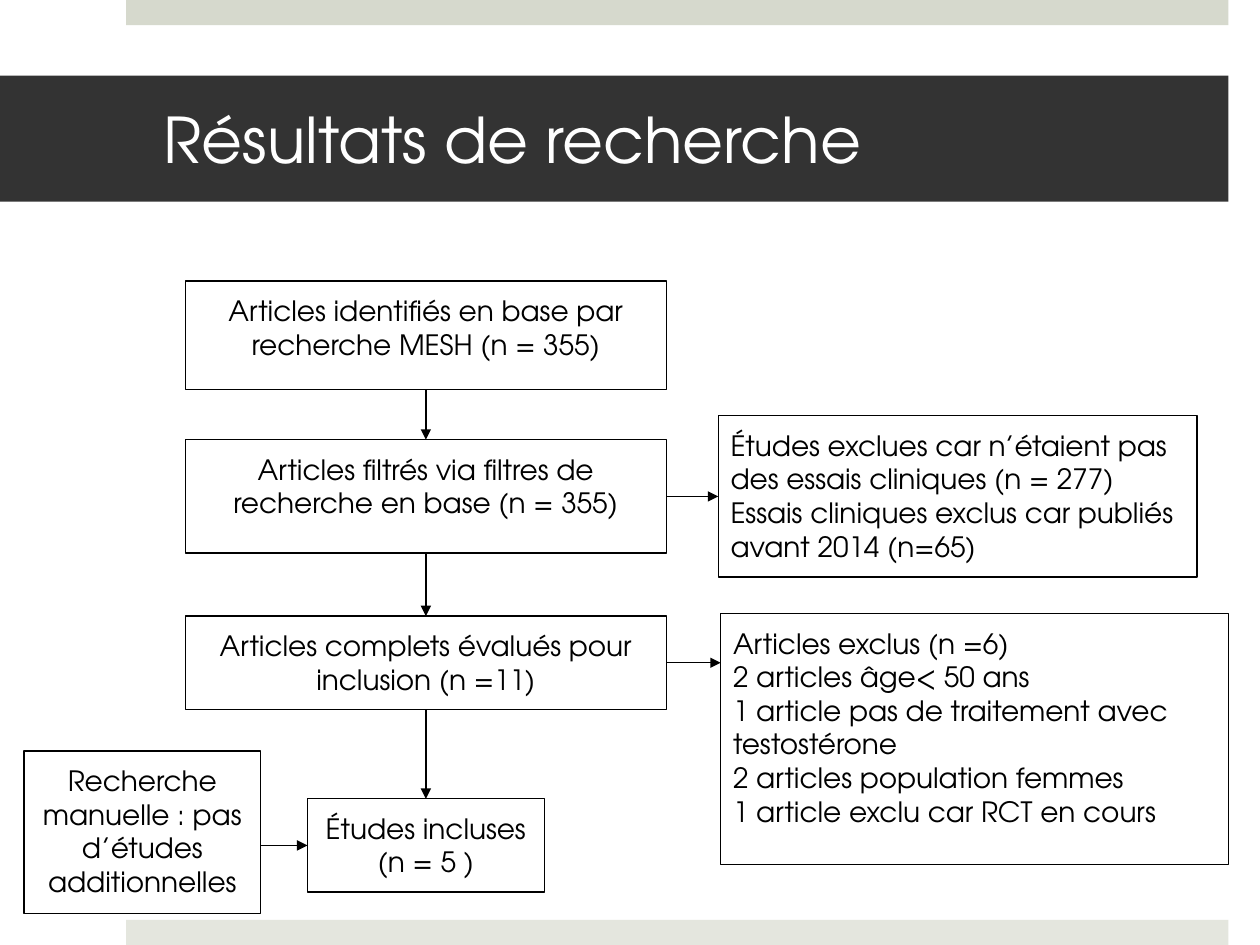
from lxml.etree import SubElement
from pptx import Presentation
from pptx.dml.color import RGBColor
from pptx.enum.shapes import MSO_CONNECTOR as Connector
from pptx.enum.shapes import MSO_SHAPE as Shape
from pptx.enum.text import MSO_ANCHOR as Anchor
from pptx.enum.text import PP_ALIGN as Align
from pptx.oxml.ns import qn
from pptx.util import Inches, Pt

BLACK = RGBColor(0x00, 0x00, 0x00)
WHITE = RGBColor(0xFF, 0xFF, 0xFF)
TITLE_GREY = RGBColor(0x33, 0x33, 0x33)
TOP_BAND = RGBColor(0xD6, 0xD9, 0xCD)
BOTTOM_BAND = RGBColor(0xE4, 0xE6, 0xDE)

FONT = "TeX Gyre Adventor"
LINE_WIDTH = Pt(0.75)
TOP, LEFT, BOTTOM, RIGHT = range(4)

TITLE_FRAME = {
    "word_wrap": True,
    "vertical_anchor": Anchor.MIDDLE,
    "margin_left": Inches(1.3),
    "margin_right": Inches(0.3),
    "margin_top": Inches(0.05),
    "margin_bottom": Inches(0.05),
}
BOX_FRAME = {
    "word_wrap": True,
    "vertical_anchor": Anchor.TOP,
    "margin_left": Inches(0.1),
    "margin_right": Inches(0.1),
    "margin_top": Inches(0.1),
    "margin_bottom": Inches(0.1),
}
TITLE_FONT = {"name": FONT, "size": Pt(36)}
BOX_FONT = {"name": FONT, "size": Pt(16)}

STEPS = {
    "identified": (1.47, 2.23, 3.82, 0.86,
                   ["Articles identifiés en base par recherche MESH (n = 355)"]),
    "filtered": (1.47, 3.49, 3.82, 0.9,
                 ["Articles filtrés via filtres de recherche en base (n = 355)"]),
    "assessed": (1.47, 4.89, 3.82, 0.74,
                 ["Articles complets évalués pour inclusion (n =11)"]),
    "included": (2.44, 6.34, 1.88, 0.74, ["Études incluses\v(n = 5 )"]),
    "manual": (0.19, 5.96, 1.88, 1.29,
               ["Recherche manuelle : pas d’études additionnelles"]),
}
EXCLUSIONS = {
    "filter_exclusions": (5.7, 3.3, 3.8, 1.28, [
        "Études exclues car n’étaient pas des essais cliniques (n = 277)",
        "Essais cliniques exclus car publiés avant 2014 (n=65)",
    ]),
    "article_exclusions": (5.72, 4.87, 4.03, 1.99, [
        "Articles exclus (n =6)",
        "2 articles âge< 50 ans",
        "1 article pas de traitement avec testostérone",
        "2 articles population femmes",
        "1 article exclu car RCT en cours",
    ]),
}


def set_all(target, values):
    for name, value in values.items():
        setattr(target, name, value)


def add_block(page, left, top, width, height, fill):
    block = page.shapes.add_shape(
        Shape.RECTANGLE, Inches(left), Inches(top), Inches(width), Inches(height))
    block.shadow.inherit = False
    block.fill.solid()
    block.fill.fore_color.rgb = fill
    block.line.fill.background()
    return block


def write(block, lines, frame_format, font_format, color, align):
    frame = block.text_frame
    set_all(frame, frame_format)
    frame.text = "\n".join(lines)
    for para in frame.paragraphs:
        para.alignment = align
        for span in para.runs:
            set_all(span.font, font_format)
            span.font.color.rgb = color


def add_box(page, left, top, width, height, lines, align):
    box = add_block(page, left, top, width, height, WHITE)
    box.line.color.rgb = BLACK
    box.line.width = LINE_WIDTH
    write(box, lines, BOX_FRAME, BOX_FONT, BLACK, align)
    return box


def add_arrow(page, start, end):
    arrow = page.shapes.add_connector(
        Connector.STRAIGHT, *(Inches(value) for value in start + end))
    arrow.line.color.rgb = BLACK
    arrow.line.width = LINE_WIDTH
    SubElement(arrow.line._get_or_add_ln(), qn("a:tailEnd"), type="triangle")
    SubElement(arrow._element.spPr, qn("a:effectLst"))
    return arrow


def join(page, source, source_side, target, target_side):
    arrow = add_arrow(page, (0, 0), (0, 0))
    arrow.begin_connect(source, source_side)
    arrow.end_connect(target, target_side)


def main():
    deck = Presentation()
    deck.slide_width, deck.slide_height = Inches(10), Inches(7.5)
    page = deck.slides.add_slide(deck.slide_layouts[6])

    add_block(page, 1, 0, 8.75, 0.2, TOP_BAND)
    add_block(page, 1, 7.3, 8.75, 0.2, BOTTOM_BAND)
    title = add_block(page, 0, 0.6, 9.75, 1, TITLE_GREY)
    write(title, ["Résultats de recherche"], TITLE_FRAME, TITLE_FONT, WHITE, Align.LEFT)

    boxes = {}
    for group, align in ((STEPS, Align.CENTER), (EXCLUSIONS, Align.LEFT)):
        for name, layout in group.items():
            boxes[name] = add_box(page, *layout, align)

    flow = ["identified", "filtered", "assessed", "included"]
    for source, target in zip(flow, flow[1:]):
        join(page, boxes[source], BOTTOM, boxes[target], TOP)
    join(page, boxes["filtered"], RIGHT, boxes["filter_exclusions"], LEFT)

    exclusion_arrow = add_arrow(page, (5.29, 5.26), (5.72, 5.26))
    exclusion_arrow.begin_connect(boxes["assessed"], RIGHT)
    manual_arrow = add_arrow(page, (2.07, 6.71), (2.44, 6.71))
    manual_arrow.end_connect(boxes["included"], LEFT)

    deck.save("out.pptx")


if __name__ == "__main__":
    main()
